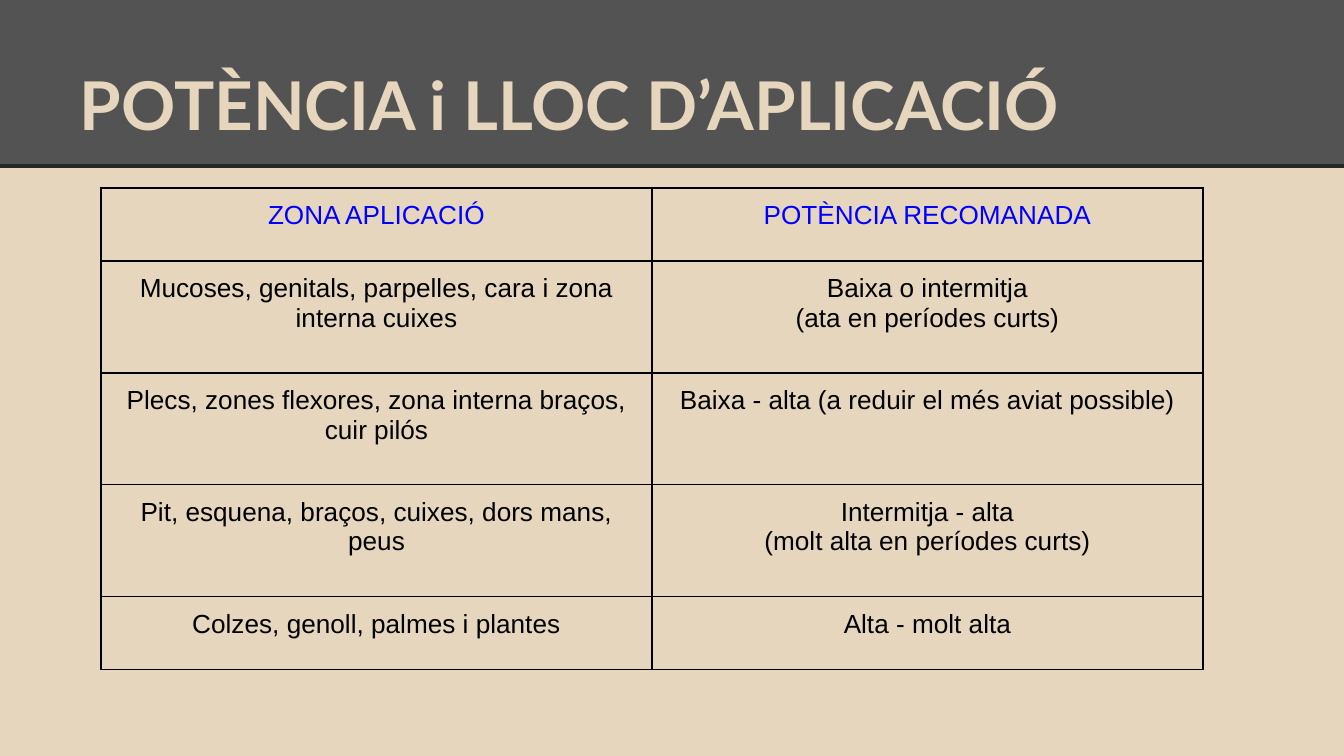
import pptx
import pptx.util
import pptx.dml.color
import pptx.enum.shapes
import pptx.enum.text
import pptx.oxml.ns
import lxml.etree

SCALE = 914400 / 134.4
INSET = 13
SAND = "E6D6BD"
BLACK = "000000"


def px(num):
    return pptx.util.Emu(round(num * SCALE))


def tint(code):
    return pptx.dml.color.RGBColor.from_string(code)


qn = pptx.oxml.ns.qn
Pt = pptx.util.Pt
align = pptx.enum.text.PP_ALIGN.CENTER

deck = pptx.Presentation()
deck.slide_width = px(1344)
deck.slide_height = px(756)
slide = deck.slides.add_slide(deck.slide_layouts[6])
slide.background.fill.solid()
slide.background.fill.fore_color.rgb = tint(SAND)
shapes = slide.shapes

band = shapes.add_shape(pptx.enum.shapes.MSO_SHAPE.RECTANGLE, 0, 0, px(1344), px(166))
band.shadow.inherit = False
band.fill.solid()
band.fill.fore_color.rgb = tint("535353")
band.line.fill.background()

rule = shapes.add_connector(
    pptx.enum.shapes.MSO_CONNECTOR.STRAIGHT, 0, px(166), px(1344), px(166)
)
rule.line.color.rgb = tint("262626")
rule.line.width = Pt(2.25)
lxml.etree.SubElement(rule.element.spPr, qn("a:effectLst"))

title = shapes.add_textbox(px(67), px(31), px(1210), px(126))
frame = title.text_frame
frame.word_wrap = True
frame.vertical_anchor = pptx.enum.text.MSO_ANCHOR.BOTTOM
frame.margin_left = frame.margin_right = px(INSET)
frame.margin_top = frame.margin_bottom = px(INSET)
run = frame.paragraphs[0].add_run()
run.text = "POTÈNCIA i LLOC D’APLICACIÓ"
run.font.name = "Lato"
run.font.size = Pt(36)
run.font.bold = True
run.font.color.rgb = tint(SAND)

rows = [
    (73, ["ZONA APLICACIÓ"], ["POTÈNCIA RECOMANADA"]),
    (112, ["Mucoses, genitals, parpelles, cara i zona interna cuixes"],
     ["Baixa o intermitja", "(ata en períodes curts)"]),
    (112, ["Plecs, zones flexores, zona interna braços, cuir pilós"],
     ["Baixa - alta (a reduir el més aviat possible)"]),
    (112, ["Pit, esquena, braços, cuixes, dors mans, peus"],
     ["Intermitja - alta", "(molt alta en períodes curts)"]),
    (73, ["Colzes, genoll, palmes i plantes"], ["Alta - molt alta"]),
]
total = sum(row[0] for row in rows)
table = shapes.add_table(len(rows), 2, px(101), px(188), px(1102), px(total)).table
table.first_row = False
table.horz_banding = False
for column in table.columns:
    column.width = px(551)

for r, (height, *texts) in enumerate(rows):
    table.rows[r].height = px(height)
    for c, lines in enumerate(texts):
        cell = table.cell(r, c)
        cell.margin_left = cell.margin_right = px(INSET)
        cell.margin_top = cell.margin_bottom = px(INSET)
        props = cell._tc.get_or_add_tcPr()
        for side in ("lnL", "lnR", "lnT", "lnB"):
            edge = lxml.etree.SubElement(props, qn("a:" + side), w=str(Pt(0.75)))
            solid = lxml.etree.SubElement(edge, qn("a:solidFill"))
            lxml.etree.SubElement(solid, qn("a:srgbClr"), val=BLACK)
        cell.fill.background()
        for n, line in enumerate(lines):
            frame = cell.text_frame
            para = frame.add_paragraph() if n else frame.paragraphs[0]
            para.alignment = align
            run = para.add_run()
            run.text = line
            run.font.name = "Arial"
            run.font.size = Pt(14)
            run.font.color.rgb = tint(BLACK if r else "0000FF")

deck.save("out.pptx")
